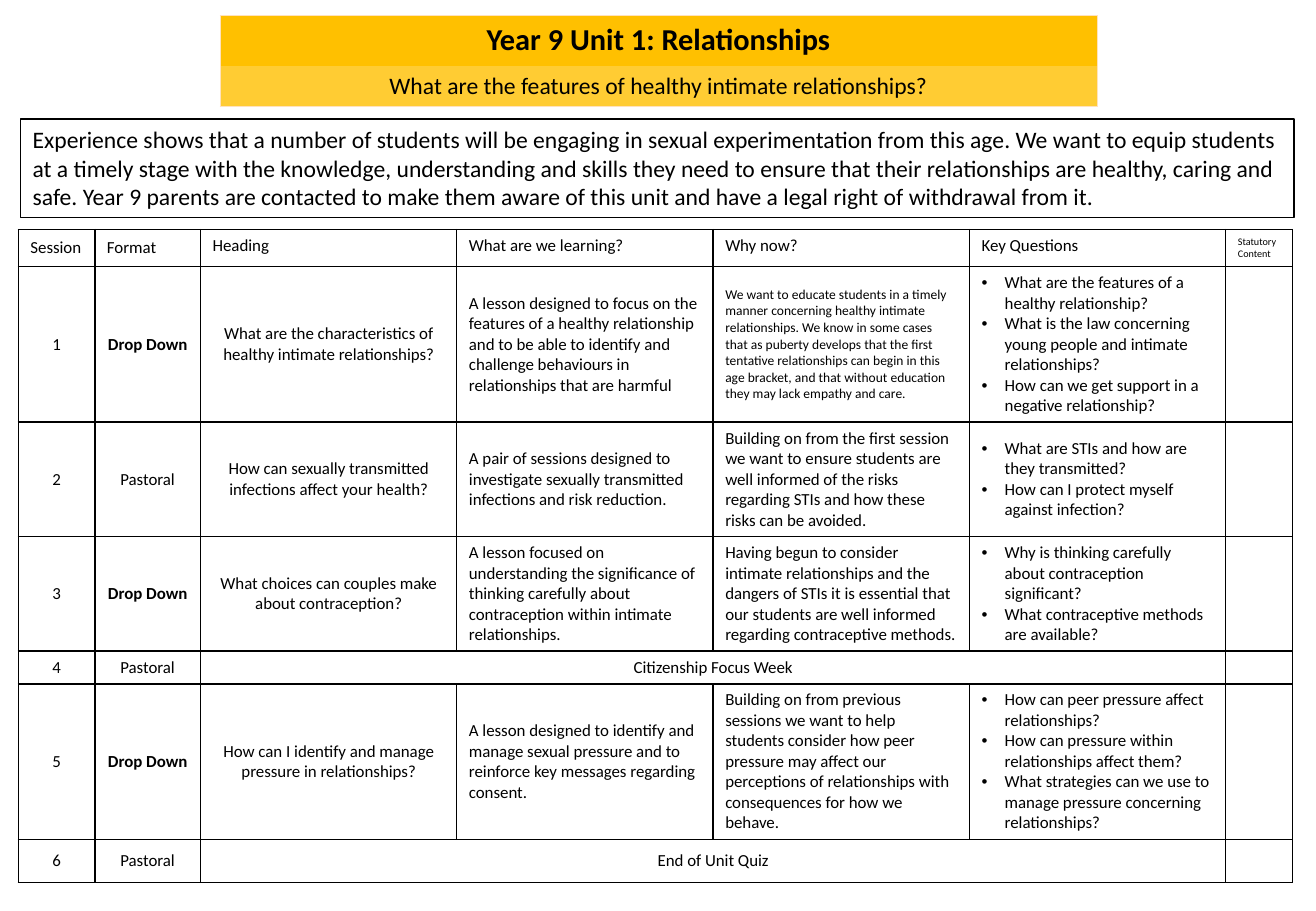
from lxml import etree
from pptx import Presentation
from pptx.dml.color import RGBColor
from pptx.enum.shapes import MSO_SHAPE
from pptx.enum.text import MSO_ANCHOR, PP_ALIGN
from pptx.oxml.ns import qn
from pptx.util import Inches, Pt

RECT = MSO_SHAPE.RECTANGLE
TOP, MIDDLE = MSO_ANCHOR.TOP, MSO_ANCHOR.MIDDLE
LEFT, CENTER = PP_ALIGN.LEFT, PP_ALIGN.CENTER
BLACK, WHITE, GOLD, PALE_GOLD, EDGE = "000000", "FFFFFF", "FFC000", "FFCC33", "FFE2BD"

TITLES = [
    ("Year 9 Unit 1: Relationships", GOLD, 18, True, "LRT"),
    ("What are the features of healthy intimate relationships?", PALE_GOLD, 14, False, "LRB"),
]
INTRO = (
    "Experience shows that a number of students will be engaging in sexual experimentation from this age. "
    "We want to equip students at a timely stage with the knowledge, understanding and skills they need to "
    "ensure that their relationships are healthy, caring and safe. Year 9 parents are contacted to make them "
    "aware of this unit and have a legal right of withdrawal from it."
)
SESSIONS = [
    ["Session", "Format", "Heading", "What are we learning?", "Why now?", "Key Questions", "Statutory Content"],
    ["1", "Drop Down", "What are the characteristics of healthy intimate relationships?",
     "A lesson designed to focus on the features of a healthy relationship and to be able to identify and "
     "challenge behaviours in relationships that are harmful",
     "We want to educate students in a timely manner concerning healthy intimate relationships. We know in "
     "some cases that as puberty develops that the first tentative relationships can begin in this age "
     "bracket, and that without education they may lack empathy and care.",
     ["What are the features of a healthy relationship?",
      "What is the law concerning young people and intimate relationships?",
      "How can we get support in a negative relationship?"], ""],
    ["2", "Pastoral", "How can sexually transmitted infections affect your health?",
     "A pair of sessions designed to investigate sexually transmitted infections and risk reduction.",
     "Building on from the first session we want to ensure students are well informed of the risks "
     "regarding STIs and how these risks can be avoided.",
     ["What are STIs and how are they transmitted?", "How can I protect myself against infection?"], ""],
    ["3", "Drop Down", "What choices can couples make about contraception?",
     "A lesson focused on understanding the significance of thinking carefully about contraception within "
     "intimate relationships.",
     "Having begun to consider intimate relationships and the dangers of STIs it is essential that our "
     "students are well informed regarding contraceptive methods.",
     ["Why is thinking carefully about contraception significant?",
      "What contraceptive methods are available?"], ""],
    ["4", "Pastoral", "Citizenship Focus Week", "", "", "", ""],
    ["5", "Drop Down", "How can I identify and manage pressure in relationships?",
     "A lesson designed to identify and manage sexual pressure and to reinforce key messages regarding consent.",
     "Building on from previous sessions we want to help students consider how peer pressure may affect our "
     "perceptions of relationships with consequences for how we behave.",
     ["How can peer pressure affect relationships?",
      "How can pressure within relationships affect them?",
      "What strategies can we use to manage pressure concerning relationships?"], ""],
    ["6", "Pastoral", "End of Unit Quiz", "", "", "", ""],
]
SESSION_COLS = [5.82, 8.03] + [19.48] * 4 + [5.08]
SESSION_ROWS = [4.07, 17.07, 12.57, 12.57, 3.57, 17.07, 4.77]
SMALL = {(0, 6): 6, (1, 4): 8}


def rgb(value):
    return RGBColor.from_string(value)


class Page:
    """Draws styled elements on one slide, with lengths in percent of its size."""

    def __init__(self, prs, font):
        self.prs, self.font = prs, font
        self.s = prs.slides.add_slide(prs.slide_layouts[6])

    def x(self, share):
        return round(self.prs.slide_width * share / 100)

    def y(self, share):
        return round(self.prs.slide_height * share / 100)

    def text(self, tf, content, size, bold=False, align=LEFT):
        bulleted = isinstance(content, list)
        for i, line in enumerate(content if bulleted else [content]):
            p = tf.add_paragraph() if i else tf.paragraphs[0]
            p.alignment = align
            if bulleted:
                pPr = p._p.get_or_add_pPr()
                pPr.set("marL", str(Inches(0.19)))
                pPr.set("indent", str(-Inches(0.19)))
                etree.SubElement(pPr, qn("a:buFont"), typeface="Arial")
                etree.SubElement(pPr, qn("a:buChar"), char="•")
            if not line:
                etree.SubElement(p._p, qn("a:endParaRPr"), sz=str(size * 100))
                continue
            r = p.add_run()
            r.text = line
            r.font.color.rgb = rgb(BLACK)
            for name, value in {"name": self.font, "size": Pt(size), "bold": bold}.items():
                setattr(r.font, name, value)

    def table(self, left, top, cols, rows):
        frame = self.s.shapes.add_table(len(rows), len(cols), self.x(left), self.y(top),
                                        self.x(sum(cols)), self.y(sum(rows)))
        table = frame.table
        table.first_row = table.horz_banding = False
        for column, width in zip(table.columns, cols):
            column.width = self.x(width)
        for row, height in zip(table.rows, rows):
            row.height = self.y(height)
        return table

    def cell(self, cell, content, size, bold=False, align=LEFT, anchor=MIDDLE,
             fill=None, line=BLACK, weight=1, sides="LRTB"):
        if fill:
            cell.fill.solid()
            cell.fill.fore_color.rgb = rgb(fill)
        else:
            cell.fill.background()
        cell.vertical_anchor = anchor
        tcPr = cell._tc.get_or_add_tcPr()
        for i, side in enumerate("LRTB"):
            ln = etree.Element(qn("a:ln" + side), w=str(Pt(weight)))
            if side in sides:
                paint = etree.SubElement(ln, qn("a:solidFill"))
                etree.SubElement(paint, qn("a:srgbClr"), val=line)
            else:
                etree.SubElement(ln, qn("a:noFill"))
            tcPr.insert(i, ln)
        self.text(cell.text_frame, content, size, bold, align)

    def box(self, left, top, width, height, content, size):
        sp = self.s.shapes.add_shape(RECT, self.x(left), self.y(top), self.x(width), self.y(height))
        sp.shadow.inherit = False
        sp.fill.solid()
        sp.fill.fore_color.rgb = rgb(WHITE)
        sp.line.color.rgb = rgb(BLACK)
        sp.line.width = Pt(1)
        tf = sp.text_frame
        for name, value in {"word_wrap": True, "vertical_anchor": TOP}.items():
            setattr(tf, name, value)
        self.text(tf, content, size)


def main():
    prs = Presentation()
    prs.slide_width, prs.slide_height = Inches(10.83), Inches(7.5)
    page = Page(prs, "Calibri")

    banner = page.table(16.71, 1.73, [66.67], [5.47, 4.4])
    for i, (title, fill, size, bold, sides) in enumerate(TITLES):
        page.cell(banner.cell(i, 0), title, size, bold, CENTER, TOP, fill, EDGE, 0.5, sides)

    sessions = page.table(1.39, 25.2, SESSION_COLS, SESSION_ROWS)
    for i, row in enumerate(SESSIONS):
        for j, content in enumerate(row):
            page.cell(sessions.cell(i, j), content, SMALL.get((i, j), 10),
                      bold=content == "Drop Down",
                      align=CENTER if i and j < 3 else LEFT,
                      anchor=MIDDLE if i or j < 2 else TOP)
        if not row[3]:
            sessions.cell(i, 2).merge(sessions.cell(i, 5))

    page.box(1.57, 13.07, 96.77, 10.8, INTRO, 14)
    prs.save("out.pptx")


if __name__ == "__main__":
    main()
